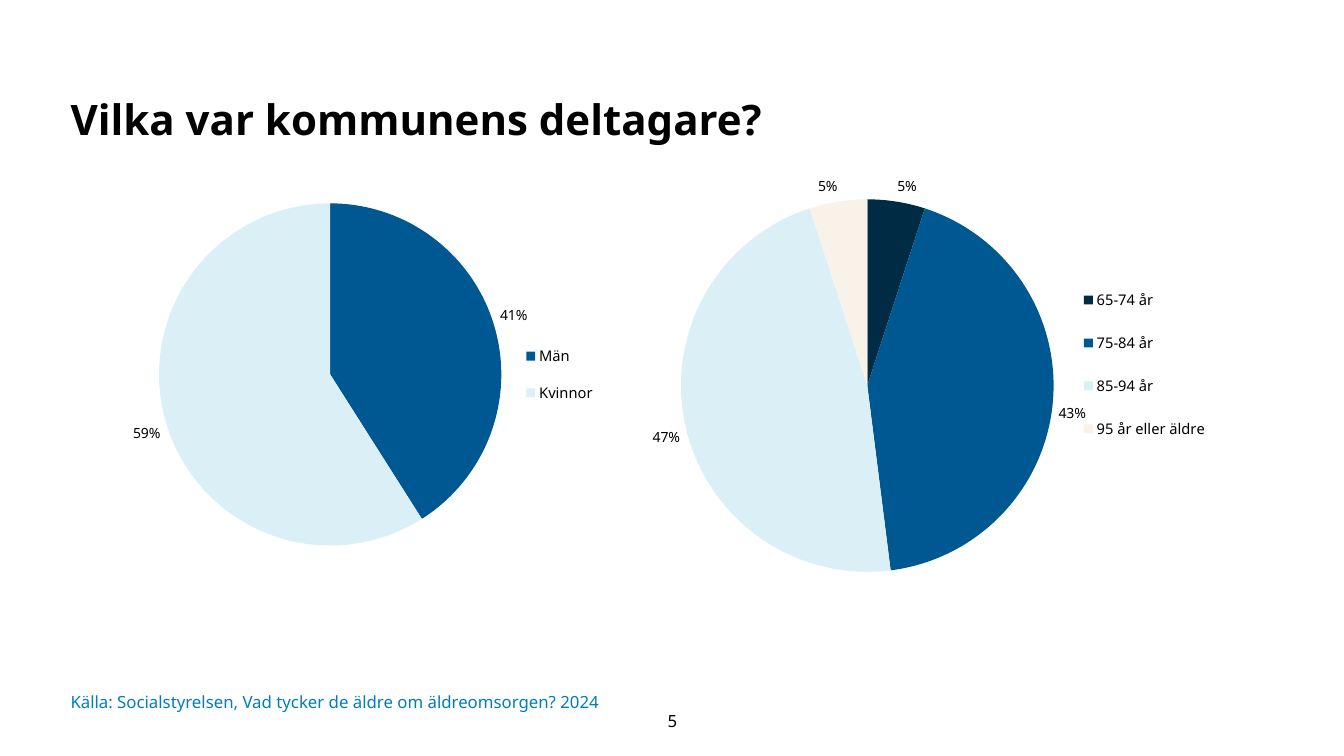
from dataclasses import dataclass

from lxml.etree import SubElement, Element
from pptx import Presentation
from pptx.chart.data import CategoryChartData as PieData
from pptx.dml.color import RGBColor as Rgb
from pptx.enum.chart import XL_CHART_TYPE as Kind
from pptx.enum.chart import XL_LABEL_POSITION as Spot
from pptx.enum.chart import XL_LEGEND_POSITION as Side
from pptx.enum.text import MSO_ANCHOR as Anchor
from pptx.enum.text import PP_ALIGN as Align
from pptx.oxml.ns import qn
from pptx.slide import Slide
from pptx.util import Inches, Pt

Box = tuple[float, float, float, float]


@dataclass(frozen=True)
class Theme:
    font: str = "Noto Sans"
    black: str = "000000"
    link: str = "017CC1"
    navy: str = "002B45"
    blue: str = "005892"
    ice: str = "DBF0F6"
    sand: str = "F8F2E8"
    title: float = 30
    note: float = 12
    legend: float = 10.5
    label: float = 10


THEME = Theme()


@dataclass(frozen=True)
class Slice:
    name: str
    value: int
    fill: str


@dataclass(frozen=True)
class Pie:
    """Box is in inches; plot and legend are shares of the box."""
    box: Box
    plot: Box
    legend: Box
    slices: tuple[Slice, ...]


@dataclass(frozen=True)
class Label:
    text: str
    box: Box
    size: float
    color: str = THEME.black
    bold: bool = False
    align: Align = Align.LEFT
    anchor: Anchor = Anchor.MIDDLE
    space: float = 1.0


PIES = (
    Pie((0.22, 1.29, 6.79, 4.71), (0.2, 0.12, 0.5, 0.79), (0.73, 0.42, 0.11, 0.19),
        (Slice("Män", 41, THEME.blue), Slice("Kvinnor", 59, THEME.ice))),
    Pie((5.92, 1.6, 6.79, 4.2), (0.12, 0.09, 0.55, 0.88), (0.7, 0.25, 0.2, 0.46),
        (Slice("65-74 år", 5, THEME.navy), Slice("75-84 år", 43, THEME.blue),
         Slice("85-94 år", 47, THEME.ice), Slice("95 år eller äldre", 5, THEME.sand))),
)

LABELS = (
    Label("Vilka var kommunens deltagare?", (0.7, 0.88, 10.63, 0.53), THEME.title,
          bold=True, anchor=Anchor.TOP, space=1.1),
    Label("Källa: Socialstyrelsen, Vad tycker de äldre om äldreomsorgen? 2024",
          (0.7, 6.76, 5.56, 0.4), THEME.note, THEME.link),
    Label("5", (6.16, 6.95, 1.02, 0.4), THEME.note, align=Align.CENTER),
)


def style(font, size: float, color: str = THEME.black, bold: bool = False) -> None:
    font.name = THEME.font
    font.size = Pt(size)
    font.bold = bold
    font.color.rgb = Rgb.from_string(color)


def place(host, index: int, box: Box, inner: bool = False) -> None:
    """Fix the layout of a plot area or legend within its chart."""
    for old in host.findall(qn("c:layout")):
        host.remove(old)
    layout = Element(qn("c:layout"))
    host.insert(index, layout)
    manual = SubElement(layout, qn("c:manualLayout"))
    pairs = [("layoutTarget", "inner")] if inner else []
    pairs += [("xMode", "edge"), ("yMode", "edge")]
    pairs += zip("xywh", map(str, box))
    for tag, value in pairs:
        SubElement(manual, qn(f"c:{tag}")).set("val", value)


def add_pie(slide: Slide, pie: Pie) -> None:
    data = PieData()
    data.categories = [piece.name for piece in pie.slices]
    data.add_series("Series 1", [piece.value for piece in pie.slices])
    frame = slide.shapes.add_chart(Kind.PIE, *map(Inches, pie.box), data)
    chart = frame.chart
    chart.has_title = False
    style(chart.font, THEME.label)

    chart.has_legend = True
    legend = chart.legend
    legend.position = Side.RIGHT
    legend.include_in_layout = False
    style(legend.font, THEME.legend)

    plot = chart.plots[0]
    plot.vary_by_categories = True
    points = plot.series[0].points
    for i, piece in enumerate(pie.slices):
        fill = points[i].format.fill
        fill.solid()
        fill.fore_color.rgb = Rgb.from_string(piece.fill)

    plot.has_data_labels = True
    labels = plot.data_labels
    labels.show_percentage = True
    labels.show_value = False
    labels.number_format = "0%"
    labels.number_format_is_linked = False
    labels.position = Spot.OUTSIDE_END
    style(labels.font, THEME.label)

    root = chart.element
    place(root.find(f".//{qn('c:plotArea')}"), 0, pie.plot, inner=True)
    place(root.find(f".//{qn('c:legend')}"), 1, pie.legend)


def add_label(slide: Slide, label: Label) -> None:
    frame = slide.shapes.add_textbox(*map(Inches, label.box)).text_frame
    frame.word_wrap = True
    frame.vertical_anchor = label.anchor
    frame.margin_left = frame.margin_right = 0
    frame.margin_top = frame.margin_bottom = 0
    line = frame.paragraphs[0]
    line.text = label.text
    line.alignment = label.align
    line.line_spacing = label.space
    style(line.font, label.size, label.color, label.bold)


def main() -> None:
    deck = Presentation()
    deck.slide_width, deck.slide_height = Inches(13.33), Inches(7.5)
    slide = deck.slides.add_slide(deck.slide_layouts[6])
    for pie in PIES:
        add_pie(slide, pie)
    for label in LABELS:
        add_label(slide, label)
    deck.save("out.pptx")


if __name__ == "__main__":
    main()
